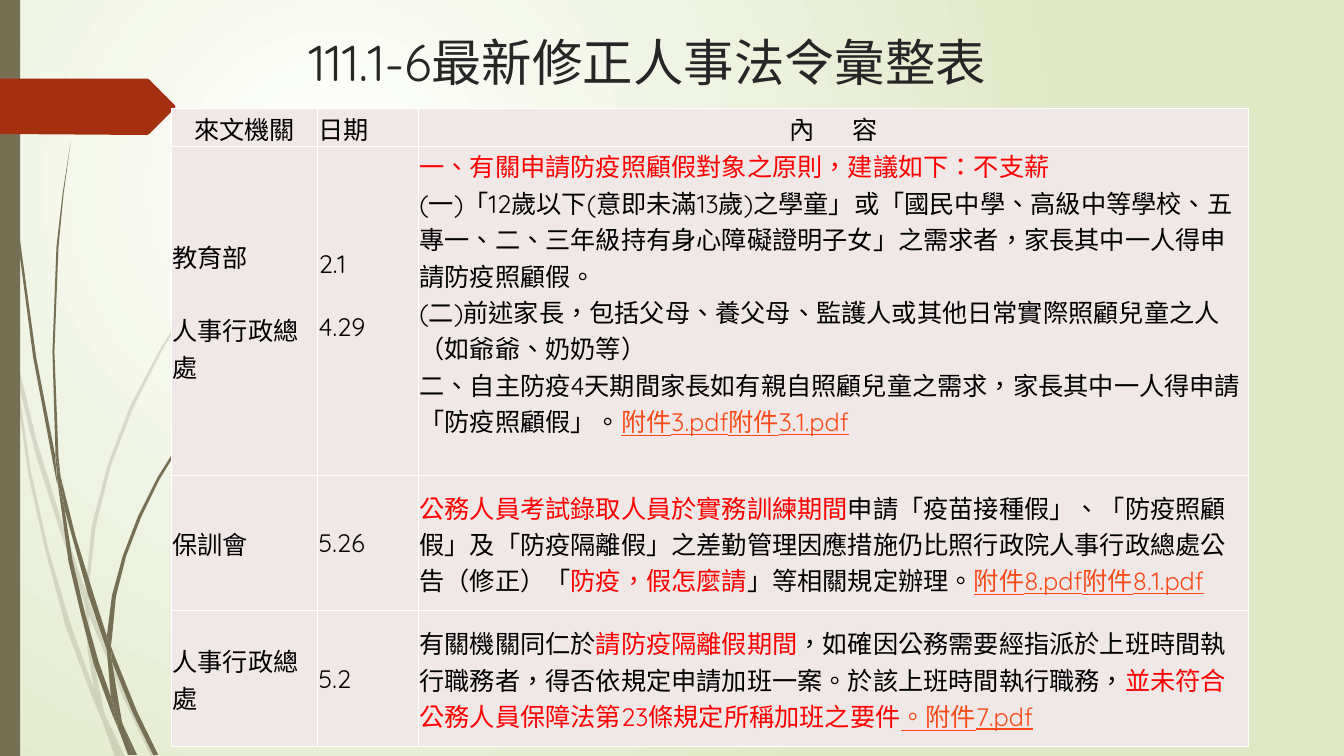
import lxml.etree
import pptx
import pptx.dml.color
import pptx.enum.lang
import pptx.enum.shapes
import pptx.enum.text
import pptx.oxml.ns
import pptx.util

Inches = pptx.util.Inches
Pt = pptx.util.Pt
qn = pptx.oxml.ns.qn
ALIGN = pptx.enum.text.PP_ALIGN
ANCHOR = pptx.enum.text.MSO_ANCHOR

COLORS = {
    "white": "FFFFFF", "pale_green": "DFE8C4", "olive": "766F54",
    "rust": "A53010", "title": "262626", "text": "000000",
    "red": "FF0000", "link": "FB4A18", "cell": "F0E8E7",
}

PALE_GRASS = [
    "0.11,3.5 0.09,3.22 0,2.82 0,2.99 0.1,3.44",
    "0.58,5.22 0.84,5.99 0.85,5.86 0.62,5.2 0.36,4.36 0.14,3.45 0.17,3.76 0.35,4.5",
    "0.92,6.07 0.88,5.96 0.88,6.1 1.23,6.94 1.5,7.51 1.55,7.51 1.27,6.92",
    "1.19,7.51 1.24,7.51 1.05,7.11",
    "0.93,6.83 0.7,6.19 0.48,5.45 0.31,4.69 0.17,3.76 0.11,3.5 0.28,4.7 0.45,5.46 "
    "0.65,6.21 0.92,6.93 1.01,7.14 0.99,7.07",
    "0.84,5.99 0.87,6.46 0.93,6.83 0.96,6.92 1.05,7.11 1.03,7.06 0.91,6.46 0.88,6.1 0.88,6.08",
    "0.88,5.84 0.95,5.22 1.1,4.62 1.32,4.05 1.6,3.49 1.92,2.96 2.29,2.45 2.68,1.98 2.9,1.75 "
    "3.12,1.54 3.12,1.53 2.89,1.75 2.68,1.97 2.28,2.44 1.91,2.95 1.58,3.48 1.29,4.03 "
    "1.07,4.61 0.91,5.22 0.85,5.84 0.85,5.86 0.88,5.96",
    "1.01,7.14 1.14,7.51 1.19,7.51",
    "0.88,6.08 0.88,6.1 0.88,5.96 0.85,5.86 0.84,5.99",
    "0.96,6.92 0.93,6.83 0.99,7.07 1.01,7.14 1.19,7.51 1.05,7.11",
]
DARK_GRASS = [
    "0.07,1.1 0.17,2.33 0.33,3.55 0.56,4.77 0.57,4.81 0.55,4.57 0.55,4.53 0.36,3.55 "
    "0.19,2.32 0.08,1.09 0.05,0.48 0.04,0 0.03,0 0.04,0.48",
    "0.88,5.92 1.06,6.45 1.06,6.31 0.93,5.9 0.75,5.32 0.6,4.72 0.64,5.05",
    "1.13,6.49 1.1,6.41 1.11,6.56 1.32,7.08 1.52,7.49 1.57,7.49 1.36,7.06",
    "1.1,6.91 0.98,6.57 0.84,6.07 0.72,5.56 0.64,5.05 0.57,4.77 0.68,5.57 0.8,6.08 "
    "0.93,6.59 1.11,7.08 1.17,7.22 1.16,7.17",
    "0.6,4.72 0.58,4.53 0.54,3.49 0.58,2.45 0.63,1.93 0.7,1.41 0.62,1.93 0.56,2.45 "
    "0.52,3.49 0.55,4.49",
    "1.33,7.49 1.36,7.49 1.22,7.19",
    "0.57,4.77 0.64,5.05 0.6,4.72 0.55,4.49 0.55,4.53",
    "1.11,6.33 1.15,5.92 1.25,5.52 1.4,5.13 1.58,4.76 1.8,4.4 2.05,4.06 2.31,3.74 2.45,3.59 "
    "2.61,3.44 2.6,3.44 2.45,3.58 2.31,3.73 2.04,4.05 1.78,4.39 1.56,4.74 1.37,5.12 "
    "1.22,5.51 1.11,5.91 1.06,6.31 1.1,6.41",
    "1.17,7.22 1.27,7.49 1.31,7.49",
    "1.06,6.45 1.1,6.91 1.16,7.06 1.22,7.19 1.21,7.16 1.11,6.56 1.09,6.51",
    "1.06,6.45 1.09,6.51 1.11,6.56 1.1,6.41 1.06,6.31",
    "1.16,7.06 1.1,6.91 1.16,7.17 1.17,7.22 1.3,7.49 1.33,7.49 1.22,7.19",
]
TAG_OUTLINE = "0,0 1.46,0 1.48,0.01 1.73,0.26 1.74,0.28 1.73,0.3 1.48,0.55 1.46,0.56 0,0.55"

COLUMN_WIDTHS = [1.45, 1, 8.23]
ROW_HEIGHTS = [0.35, 2.85, 1.34, 1.35]
CELLS = [
    [[[("text", "來文機關")]], [[("text", "日期")]], [[("text", "內 "), ("text", "容")]]],
    [
        [[("text", "教育部")], [("text", "人事行政總處")]],
        [[("text", "2.1")], [("text", "4.29")]],
        [
            [("red", "一、有關申請防疫照顧假對象之原則，建議如下：不支薪")],
            [("text", "(一)「12歲以下(意即未滿13歲)之學童」或「國民中學、高級中等學校、五專一、二、"
                      "三年級持有身心障礙證明子女」之需求者，家長其中一人得申請防疫照顧假。")],
            [("text", "(二)前述家長，包括父母、養父母、監護人或其他日常實際照顧兒童之人（如爺爺、奶奶等）")],
            [("text", "二、自主防疫4天期間家長如有親自照顧兒童之需求，家長其中一人得申請「防疫照顧假」。"),
             ("link", "附件3.pdf"), ("link", "附件3.1.pdf")],
        ],
    ],
    [
        [[("text", "保訓會")]],
        [[("text", "5.26")]],
        [[("red", "公務人員考試錄取人員於實務訓練期間"),
          ("text", "申請「疫苗接種假」、「防疫照顧假」及「防疫隔離假」之差勤管理因應措施仍比照"
                   "行政院人事行政總處公告（修正）「"),
          ("red", "防疫，假怎麼請"), ("text", "」等相關規定辦理。"),
          ("link", "附件8.pdf"), ("link", "附件8.1.pdf")]],
    ],
    [
        [[("text", "人事行政總處")]],
        [[("text", "5.2")]],
        [[("text", "有關機關同仁於"), ("red", "請防疫隔離假期間"),
          ("text", "，如確因公務需要經指派於上班時間執行職務者，得否依規定申請加班一案。"
                   "於該上班時間執行職務，"),
          ("red", "並未符合公務人員保障法第23條規定所稱加班之要件"), ("link", "。附件7.pdf")]],
    ],
]


def rgb(name):
    return pptx.dml.color.RGBColor.from_string(COLORS[name])


def apply_format(target, values):
    for name, value in values.items():
        setattr(target, name, value)


def add_run(paragraph, text, color, size):
    run = paragraph.add_run()
    run.text = text
    apply_format(run.font, {
        "name": "Quicksand", "size": Pt(size), "bold": False,
        "underline": True if color == "link" else None,
        "language_id": pptx.enum.lang.MSO_LANGUAGE_ID.TRADITIONAL_CHINESE,
    })
    run.font.color.rgb = rgb(color)
    return run


def paint(shape, color, opacity=100):
    shape.shadow.inherit = False
    shape.fill.solid()
    shape.fill.fore_color.rgb = rgb(color)
    shape.line.fill.background()
    if opacity < 100:
        fill_color = shape.fill._xPr.find(qn("a:solidFill"))[0]
        lxml.etree.SubElement(fill_color, qn("a:alpha"), val=str(opacity * 1000))


def add_outline(slide, left, top, outline, color, opacity=100):
    points = []
    for pair in outline.split():
        x, y = pair.split(",")
        points.append((Inches(left + float(x)), Inches(top + float(y))))
    builder = slide.shapes.build_freeform(*points[0])
    builder.add_line_segments(points[1:], close=True)
    paint(builder.convert_to_shape(), color, opacity)


def fill_background(slide):
    fill = slide.background.fill
    fill.gradient()
    for stop, color, position in zip(fill.gradient_stops, ["white", "pale_green"], [0, 1]):
        stop.color.rgb = rgb(color)
        stop.position = position
    gradient = slide.background._cSld.find(".//" + qn("a:gradFill"))
    for linear in gradient.findall(qn("a:lin")):
        gradient.remove(linear)
    circle = lxml.etree.SubElement(gradient, qn("a:path"), {"path": "circle"})
    lxml.etree.SubElement(circle, qn("a:fillToRect"), l="50000", t="50000", r="100000", b="100000")


def add_side_decoration(slide, left, top, height):
    for outlines, opacity in [(PALE_GRASS, 20), (DARK_GRASS, 100)]:
        for outline in outlines:
            add_outline(slide, left, top, outline, "olive", opacity)
    bar = slide.shapes.add_shape(pptx.enum.shapes.MSO_SHAPE.RECTANGLE, Inches(left), Inches(top),
                                 Inches(0.2), Inches(height))
    paint(bar, "olive")
    add_outline(slide, left, top + 0.78, TAG_OUTLINE, "rust")


def add_title(slide, left, top, width, height):
    title = slide.shapes.title
    apply_format(title, {"left": Inches(left), "top": Inches(top),
                         "width": Inches(width), "height": Inches(height)})
    apply_format(title.text_frame, {"word_wrap": True, "vertical_anchor": ANCHOR.TOP,
                                    "auto_size": pptx.enum.text.MSO_AUTO_SIZE.NONE})
    paragraph = title.text_frame.paragraphs[0]
    paragraph.alignment = ALIGN.LEFT
    add_run(paragraph, "111.1-6最新修正人事法令彙整表", "title", 36)


def add_borders(cell):
    properties = cell._tc.get_or_add_tcPr()
    for index, side in enumerate(["a:lnL", "a:lnR", "a:lnT", "a:lnB"]):
        line = lxml.etree.Element(qn(side), w=str(Pt(1)))
        solid = lxml.etree.SubElement(line, qn("a:solidFill"))
        lxml.etree.SubElement(solid, qn("a:srgbClr"), val=COLORS["white"])
        properties.insert(index, line)


def fill_cell(cell, paragraphs, alignment, gap, bottom):
    apply_format(cell, {"vertical_anchor": ANCHOR.MIDDLE, "margin_left": Inches(0.01),
                        "margin_right": Inches(0.01), "margin_top": Inches(0.01),
                        "margin_bottom": Inches(bottom)})
    cell.fill.solid()
    cell.fill.fore_color.rgb = rgb("cell")
    add_borders(cell)
    for index, runs in enumerate(paragraphs):
        paragraph = cell.text_frame.add_paragraph() if index else cell.text_frame.paragraphs[0]
        apply_format(paragraph, {"alignment": alignment, "space_before": Pt(gap if index else 0)})
        for color, text in runs:
            run = add_run(paragraph, text, color, 18)
            if text.endswith(" "):
                run.font._element.set("spc", "1150")


def add_regulation_table(slide, left, top, width, height):
    table = slide.shapes.add_table(len(ROW_HEIGHTS), len(COLUMN_WIDTHS), Inches(left), Inches(top),
                                   Inches(width), Inches(height)).table
    apply_format(table, {"first_row": False, "horz_banding": False})
    for column, column_width in zip(table.columns, COLUMN_WIDTHS):
        column.width = Inches(column_width)
    for row, row_height in zip(table.rows, ROW_HEIGHTS):
        row.height = Inches(row_height)
    gaps = [26, 22.5, 0]
    bottoms = [0, 0.31, 0.36]
    for row_index, row in enumerate(CELLS):
        for column_index, paragraphs in enumerate(row):
            centered = row_index == 0 and column_index != 1
            bottom = bottoms[column_index] if row_index == 1 else 0
            fill_cell(table.cell(row_index, column_index), paragraphs,
                      ALIGN.CENTER if centered else ALIGN.LEFT, gaps[column_index], bottom)


def main():
    presentation = pptx.Presentation()
    apply_format(presentation, {"slide_width": Inches(13.33), "slide_height": Inches(7.5)})
    slide = presentation.slides.add_slide(presentation.slide_layouts[5])
    fill_background(slide)
    add_side_decoration(slide, 0, 0, 7.5)
    add_title(slide, 2.96, 0.26, 9.75, 1.4)
    add_regulation_table(slide, 1.7, 1.08, 10.68, 5.88)
    presentation.save("out.pptx")


if __name__ == "__main__":
    main()
